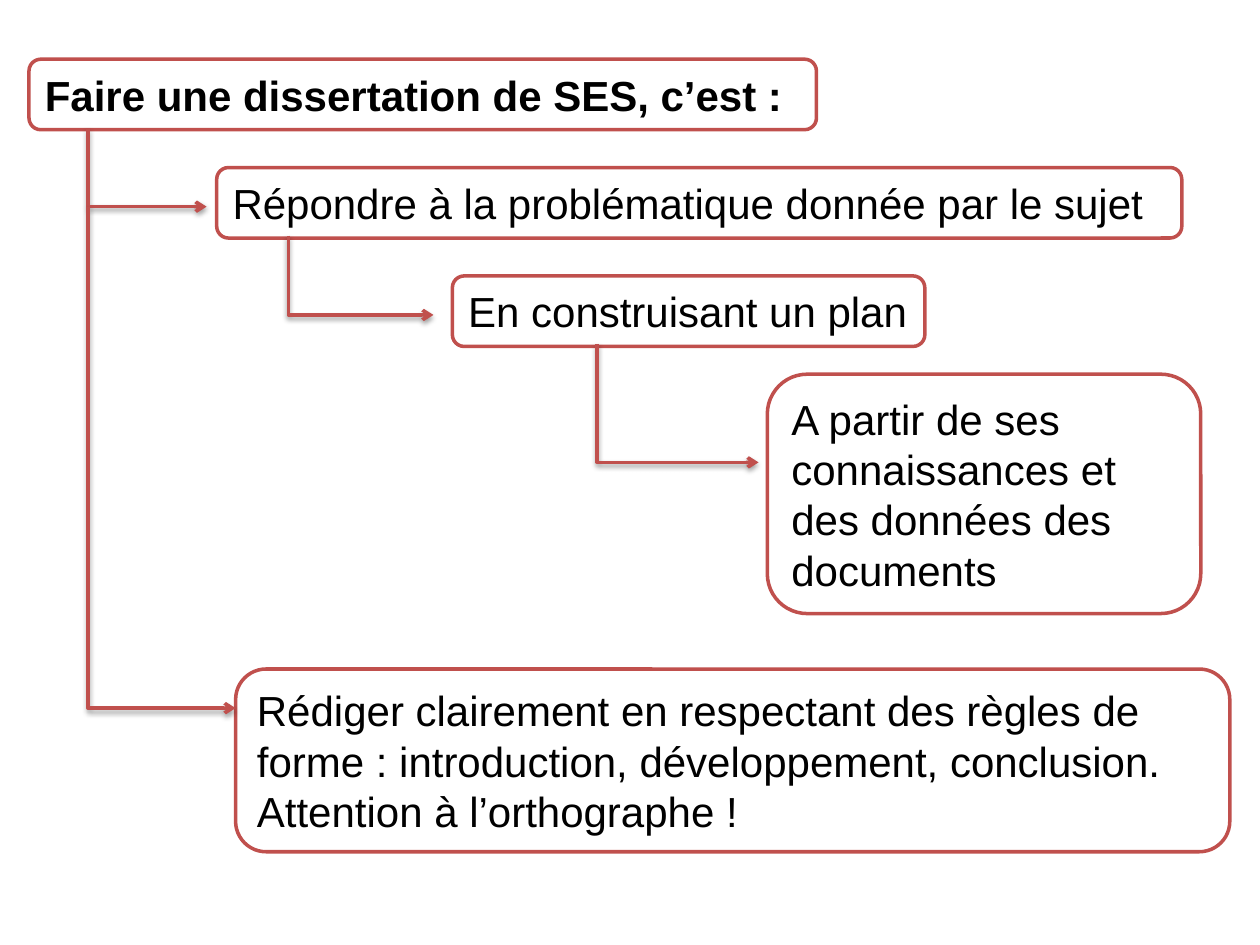
from dataclasses import dataclass

from lxml import etree
from pptx import Presentation
from pptx.dml.color import RGBColor
from pptx.enum.shapes import MSO_CONNECTOR, MSO_SHAPE
from pptx.enum.text import MSO_ANCHOR, MSO_AUTO_SIZE, PP_ALIGN
from pptx.oxml.ns import qn
from pptx.util import Inches, Pt

ELBOW = MSO_CONNECTOR.ELBOW
ROUNDED = MSO_SHAPE.ROUNDED_RECTANGLE
MIDDLE = MSO_ANCHOR.MIDDLE
GROW = MSO_AUTO_SIZE.SHAPE_TO_FIT_TEXT
LEFT = PP_ALIGN.LEFT


@dataclass(frozen=True)
class Theme:
    red: RGBColor = RGBColor(0xC0, 0x50, 0x4D)
    white: RGBColor = RGBColor(0xFF, 0xFF, 0xFF)
    black: RGBColor = RGBColor(0, 0, 0)
    shadow: str = "000000"
    font: str = "Arial"
    text_size: Pt = Pt(24)
    line_width: Pt = Pt(2)


class DiagramSlide:
    def __init__(self, slide, theme):
        self.slide = slide
        self.theme = theme

    def outline(self, line):
        line.color.rgb = self.theme.red
        line.width = self.theme.line_width

    def box(self, left, top, width, height, text, bold=False):
        shape = self.slide.shapes.add_shape(
            ROUNDED, Inches(left), Inches(top), Inches(width), Inches(height))
        shape.shadow.inherit = False
        shape.fill.solid()
        shape.fill.fore_color.rgb = self.theme.white
        self.outline(shape.line)
        frame = shape.text_frame
        frame.word_wrap = True
        frame.auto_size = GROW
        frame.vertical_anchor = MIDDLE
        paragraph = frame.paragraphs[0]
        paragraph.alignment = LEFT
        run = paragraph.add_run()
        run.text = text
        run.font.name = self.theme.font
        run.font.size = self.theme.text_size
        run.font.bold = bold
        run.font.color.rgb = self.theme.black

    def down_then_right(self, start_x, start_y, end_x, end_y):
        connector = self.slide.shapes.add_connector(
            ELBOW, Inches(start_x), Inches(start_y), Inches(end_x), Inches(end_y))
        self.outline(connector.line)
        properties = connector._element.spPr
        guides = properties.find(qn("a:prstGeom")).get_or_add_avLst()
        etree.SubElement(guides, qn("a:gd"), name="adj1", fmla="val 0")
        etree.SubElement(properties.find(qn("a:ln")), qn("a:tailEnd"), type="arrow")
        effects = etree.SubElement(properties, qn("a:effectLst"))
        shadow = etree.SubElement(
            effects, qn("a:outerShdw"), blurRad=str(Pt(3.1)), dist=str(Pt(1.6)),
            dir="5400000", rotWithShape="0")
        color = etree.SubElement(shadow, qn("a:srgbClr"), val=self.theme.shadow)
        etree.SubElement(color, qn("a:alpha"), val="38000")


def main():
    """Build the diagram of the steps of a SES essay."""
    presentation = Presentation()
    presentation.slide_width = Inches(10)
    presentation.slide_height = Inches(7.5)
    slide = presentation.slides.add_slide(presentation.slide_layouts[6])
    diagram = DiagramSlide(slide, Theme())

    diagram.box(0.23, 0.47, 6.25, 0.56, "Faire une dissertation de SES, c’est :", bold=True)
    steps = [
        (1.72, 1.33, 7.66, 0.56, "Répondre à la problématique donnée par le sujet"),
        (3.59, 2.19, 3.75, 0.56, "En construisant un plan"),
        (6.09, 2.97, 3.44, 1.9, "A partir de ses connaissances et des données des documents"),
        (1.87, 5.31, 7.89, 1.45,
         "Rédiger clairement en respectant des règles de forme : introduction, "
         "développement, conclusion. Attention à l’orthographe !"),
    ]
    for step in steps:
        diagram.box(*step)

    arrows = [
        (0.7, 1.02, 1.64, 1.64),
        (2.29, 1.87, 3.44, 2.5),
        (4.74, 2.73, 6.02, 3.67),
        (0.7, 1.64, 1.87, 5.62),
    ]
    for arrow in arrows:
        diagram.down_then_right(*arrow)

    presentation.save("out.pptx")


if __name__ == "__main__":
    main()
